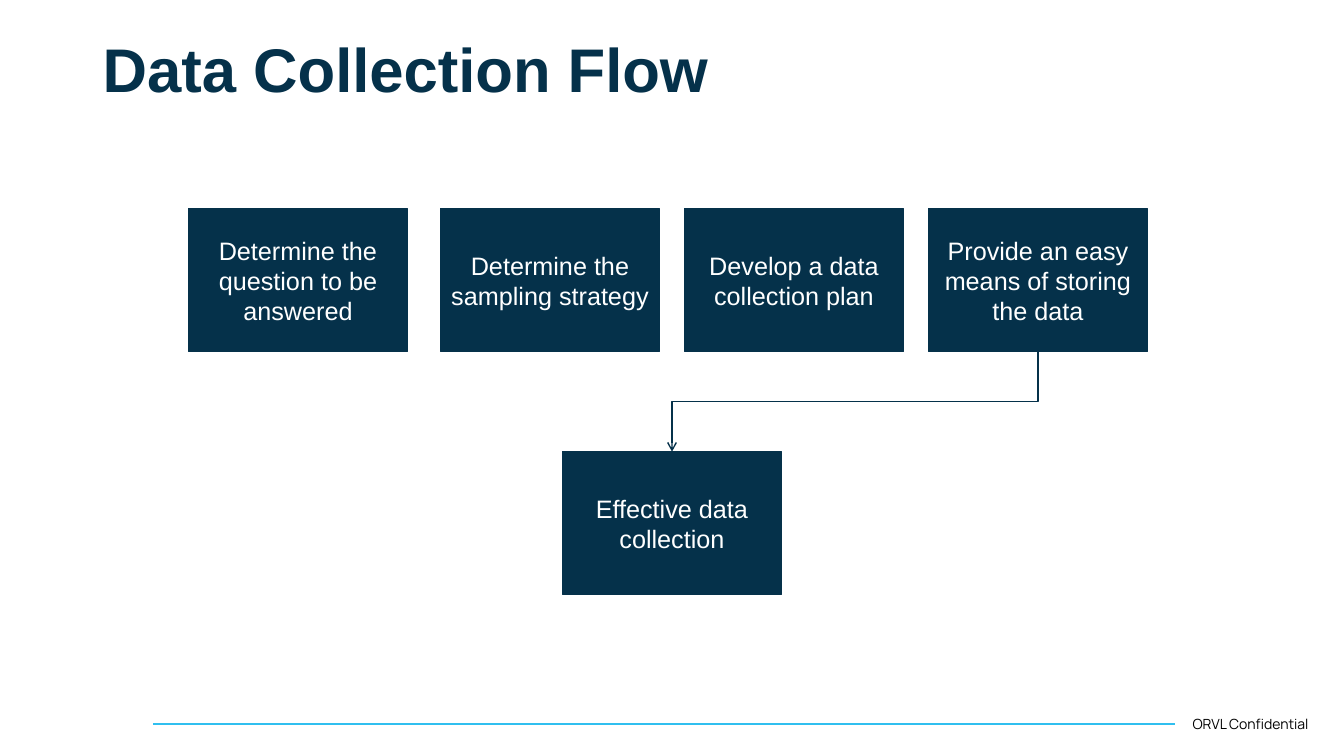
"""Build the Data Collection Flow slide."""
from lxml import etree
from pptx import Presentation
from pptx import util as u
from pptx.dml.color import RGBColor
from pptx.enum import shapes, text
from pptx.oxml.ns import qn

COLORS = {"navy": "05314A", "sky": "30BFEF", "white": "FFFFFF", "black": "000000"}
STEP_WIDTH, STEP_HEIGHT = 2.17, 1.42
STEPS = [
    (1.87, 2.07, "Determine the question to be answered"),
    (4.37, 2.07, "Determine the sampling strategy"),
    (6.79, 2.07, "Develop a data collection plan"),
    (9.21, 2.07, "Provide an easy means of storing the data"),
    (5.58, 4.48, "Effective data collection"),
]


def write(shape, words, font_name, size, color):
    frame = shape.text_frame
    frame.word_wrap = True
    paragraph = frame.paragraphs[0]
    paragraph.text = words
    paragraph.font.name = font_name
    paragraph.font.size = u.Pt(size)
    paragraph.font.color.rgb = RGBColor.from_string(COLORS[color])
    return frame, paragraph


def style_line(connector, color, width):
    connector.line.color.rgb = RGBColor.from_string(COLORS[color])
    connector.line.width = u.Pt(width)
    etree.SubElement(connector._element.spPr, qn("a:effectLst"))


deck = Presentation()
deck.slide_width, deck.slide_height = u.Inches(13.33), u.Inches(7.5)
slide = deck.slides.add_slide(deck.slide_layouts[6])

footer_rule = slide.shapes.add_connector(
    shapes.MSO_CONNECTOR.STRAIGHT,
    u.Inches(1.52), u.Inches(7.18), u.Inches(11.65), u.Inches(7.18))
style_line(footer_rule, "sky", 1.5)

footer = slide.shapes.add_textbox(
    u.Inches(11.73), u.Inches(7.05), u.Inches(1.48), u.Inches(0.27))
footer_frame, _ = write(footer, "ORVL Confidential", "Manrope", 10, "black")
footer_frame.auto_size = text.MSO_AUTO_SIZE.SHAPE_TO_FIT_TEXT

title = slide.shapes.add_textbox(
    u.Inches(0.92), u.Inches(0.28), u.Inches(11.5), u.Inches(0.88))
title_frame, heading = write(title, "Data Collection Flow", "Arial", 44, "navy")
title_frame.vertical_anchor = text.MSO_ANCHOR.MIDDLE
heading.font.bold = True
heading.line_spacing = 0.9

steps = []
for left, top, words in STEPS:
    step = slide.shapes.add_shape(
        shapes.MSO_SHAPE.RECTANGLE, u.Inches(left), u.Inches(top),
        u.Inches(STEP_WIDTH), u.Inches(STEP_HEIGHT))
    step.shadow.inherit = False
    step.fill.solid()
    step.fill.fore_color.rgb = RGBColor.from_string(COLORS["navy"])
    step.line.color.rgb = RGBColor.from_string(COLORS["navy"])
    step.line.width = u.Pt(1)
    step_frame, label = write(step, words, "Arial", 18, "white")
    step_frame.vertical_anchor = text.MSO_ANCHOR.MIDDLE
    label.alignment = text.PP_ALIGN.CENTER
    steps.append(step)

storing, result = steps[-2:]
flow = slide.shapes.add_connector(shapes.MSO_CONNECTOR.ELBOW, 0, 0, 0, 0)
flow.begin_connect(storing, 2)
flow.end_connect(result, 0)
across, down = flow.width, flow.height
flow.left += (across - down) // 2
flow.top += (down - across) // 2
flow.width, flow.height = down, across
turn = flow._element.spPr.find(qn("a:xfrm"))
turn.set("rot", "5400000")
turn.set("flipH", "0")
style_line(flow, "navy", 1)
etree.SubElement(flow.line._get_or_add_ln(), qn("a:tailEnd"), type="arrow")

deck.save("out.pptx")
